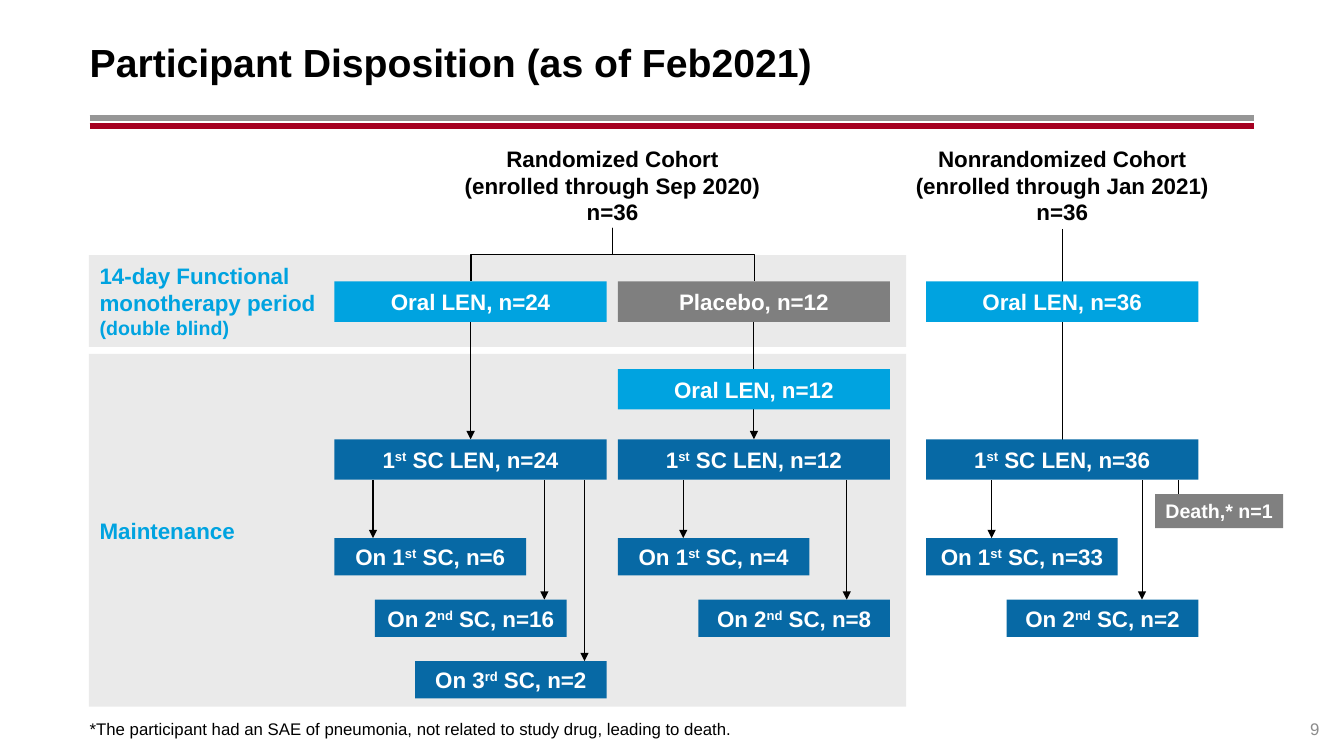
from lxml import etree
from pptx import Presentation
from pptx.dml.color import RGBColor
from pptx.enum import shapes, text
from pptx.oxml.ns import qn
from pptx.util import Cm, Pt

SKY, NAVY, GREY, PANEL = "00A3E0", "0769A5", "7F7F7F", "EAEAEA"
LEFT, CENTER, RIGHT = text.PP_ALIGN.LEFT, text.PP_ALIGN.CENTER, text.PP_ALIGN.RIGHT
MIDDLE, BOTTOM = text.MSO_ANCHOR.MIDDLE, text.MSO_ANCHOR.BOTTOM
hexcolor = RGBColor.from_string

deck = Presentation()
deck.slide_width, deck.slide_height = Cm(33.87), Cm(19.05)
page = deck.slides.add_slide(deck.slide_layouts[1])


def write(box, lines, color, size=16, bold=True, align=CENTER, anchor=MIDDLE, inset=0):
    """Fill a shape with paragraphs; parts between ^ marks are superscript."""
    frame = box.text_frame
    frame.word_wrap = True
    frame.auto_size = text.MSO_AUTO_SIZE.NONE
    frame.vertical_anchor = anchor
    frame.margin_left = frame.margin_right = Cm(inset)
    frame.margin_top = frame.margin_bottom = 0
    for number, line in enumerate(lines):
        para = frame.paragraphs[0] if number == 0 else frame.add_paragraph()
        para.alignment = align
        para.space_before = Pt(0)
        for part, words in enumerate(line.split("^")):
            span = para.add_run()
            span.text = words
            span.font.name, span.font.size, span.font.bold = "Arial", Pt(size), bold
            span.font.color.rgb = hexcolor(color)
            if part % 2:
                span._r.get_or_add_rPr().set("baseline", "30000")


def connect(x1, y1, x2, y2, color="000000", width=0.75, arrow=True):
    line = page.shapes.add_connector(shapes.MSO_CONNECTOR.STRAIGHT, Cm(x1), Cm(y1), Cm(x2), Cm(y2))
    line.line.color.rgb = hexcolor(color)
    line.line.width = Pt(width)
    if arrow:
        etree.SubElement(line.line._get_or_add_ln(), qn("a:tailEnd"), type="triangle")
    etree.SubElement(line._element.spPr, qn("a:effectLst"))


# Title and footnote
title, footnote = page.placeholders
title.left, title.top, title.width, title.height = Cm(2.26), Cm(0.46), Cm(29.34), Cm(2.18)
write(title, ["Participant Disposition (as of Feb2021)"], "000000", 28, align=LEFT)
footnote.left, footnote.top, footnote.width, footnote.height = Cm(2.26), Cm(17.35), Cm(29.34), Cm(1.27)
write(footnote, ["*The participant had an SAE of pneumonia, not related to study drug, leading to death."],
      "000000", 12, bold=False, align=LEFT, anchor=BOTTOM)
note_format = footnote.text_frame.paragraphs[0]._p.get_or_add_pPr()
note_format.set("marL", "0")
note_format.set("indent", "0")
etree.SubElement(note_format, qn("a:buNone"))

# Double rule under the title
for rule_top, rule_color in [(2.97, "969696"), (3.18, "A50021")]:
    connect(2.26, rule_top, 31.6, rule_top, rule_color, 4.25, arrow=False)

# Flow geometry
COLUMNS = [8.43, 15.57, 23.34]
WIDE, TALL = 6.86, 1.02
SMALL, LOW = 4.83, 0.94
ORAL, SWITCH, FIRST = 7.09, 9.3, 11.07
STATUS, STATUS_STEP = 13.56, 1.55
middles = [column + WIDE / 2 for column in COLUMNS]

# Boxes: left, top, width, height, text, fill
boxes = [
    (COLUMNS[0], ORAL, WIDE, TALL, "Oral LEN, n=24", SKY),
    (COLUMNS[1], ORAL, WIDE, TALL, "Placebo, n=12", GREY),
    (COLUMNS[2], ORAL, WIDE, TALL, "Oral LEN, n=36", SKY),
    (COLUMNS[1], SWITCH, WIDE, TALL, "Oral LEN, n=12", SKY),
]
for column, count in zip(COLUMNS, [24, 12, 36]):
    boxes.append((column, FIRST, WIDE, TALL, f"1^st^ SC LEN, n={count}", NAVY))

# Status boxes per column: indent, arrow offset, ordinal, count
statuses = [
    [(0, 0.97, "1^st^", 6), (1.02, 5.29, "2^nd^", 16), (2.03, 6.3, "3^rd^", 2)],
    [(0, 1.65, "1^st^", 4), (2.03, 5.77, "2^nd^", 8)],
    [(0, 1.65, "1^st^", 33), (2.03, 5.44, "2^nd^", 2)],
]
arrows = []
for column, column_statuses in zip(COLUMNS, statuses):
    for row, (indent, offset, ordinal, count) in enumerate(column_statuses):
        top = STATUS + row * STATUS_STEP
        boxes.append((column + indent, top, SMALL, LOW, f"On {ordinal} SC, n={count}", NAVY))
        arrows.append((column + offset, FIRST + TALL, column + offset, top))

# Grey panels behind the two periods
for top, height in [(8.92, 8.89), (6.43, 2.31)]:
    panel = page.shapes.add_shape(shapes.MSO_SHAPE.RECTANGLE, Cm(2.24), Cm(top), Cm(20.6), Cm(height))
    panel.shadow.inherit = False
    panel.fill.solid()
    panel.fill.fore_color.rgb = hexcolor(PANEL)
    panel.line.fill.background()

# Fork from the randomized cohort to its two arms
fork = page.shapes.add_shape(shapes.MSO_SHAPE.LEFT_BRACE, Cm(14.78), Cm(2.84), Cm(1.32), Cm(7.14))
fork.rotation = 90
fork.adjustments[0], fork.adjustments[1] = 0, 0.5
fork.shadow.inherit = False
fork.fill.background()
fork.line.color.rgb = hexcolor("000000")
fork.line.width = Pt(0.75)

# Lines run behind the boxes
for middle in middles[:2]:
    connect(middle, ORAL + TALL, middle, FIRST)
connect(middles[2], 5.77, middles[2], 11.61)
for arrow_ends in arrows:
    connect(*arrow_ends)
connect(29.69, FIRST + TALL, 29.69, 12.98, arrow=False)

boxes.append((29.11, 12.45, 3.23, 0.86, "Death,* n=1", "808080"))
for left, top, width, height, label, fill in boxes:
    box = page.shapes.add_shape(shapes.MSO_SHAPE.RECTANGLE, Cm(left), Cm(top), Cm(width), Cm(height))
    box.shadow.inherit = False
    box.fill.solid()
    box.fill.fore_color.rgb = hexcolor(fill)
    box.line.fill.background()
    write(box, [label], "FFFFFF", 14 if label.startswith("Death") else 16)

# Cohort headings, period labels and page number
labels = [
    (10.85, 3.51, 9.17, 2.31, ["Randomized Cohort", "(enrolled through Sep 2020)", "n=36"],
     dict(color="000000")),
    (22.53, 3.51, 8.48, 2.31, ["Nonrandomized Cohort", "(enrolled through Jan 2021)", "n=36"],
     dict(color="000000")),
    (2.26, 6.43, 6.17, 2.31, ["14-day Functional", "monotherapy period", "(double blind)"],
     dict(color=SKY, align=LEFT, inset=0.25)),
    (2.26, 12.9, 6.17, 0.94, ["Maintenance"], dict(color=SKY, align=LEFT, inset=0.25)),
    (31.6, 17.6, 1.65, 1.02, ["9"],
     dict(color="8C8C8C", size=12, bold=False, align=RIGHT, anchor=BOTTOM)),
]
for left, top, width, height, lines, style in labels:
    box = page.shapes.add_textbox(Cm(left), Cm(top), Cm(width), Cm(height))
    write(box, lines, **style)
    if lines[-1] == "(double blind)":
        box.text_frame.paragraphs[-1].runs[0].font.size = Pt(14)

deck.save("out.pptx")
